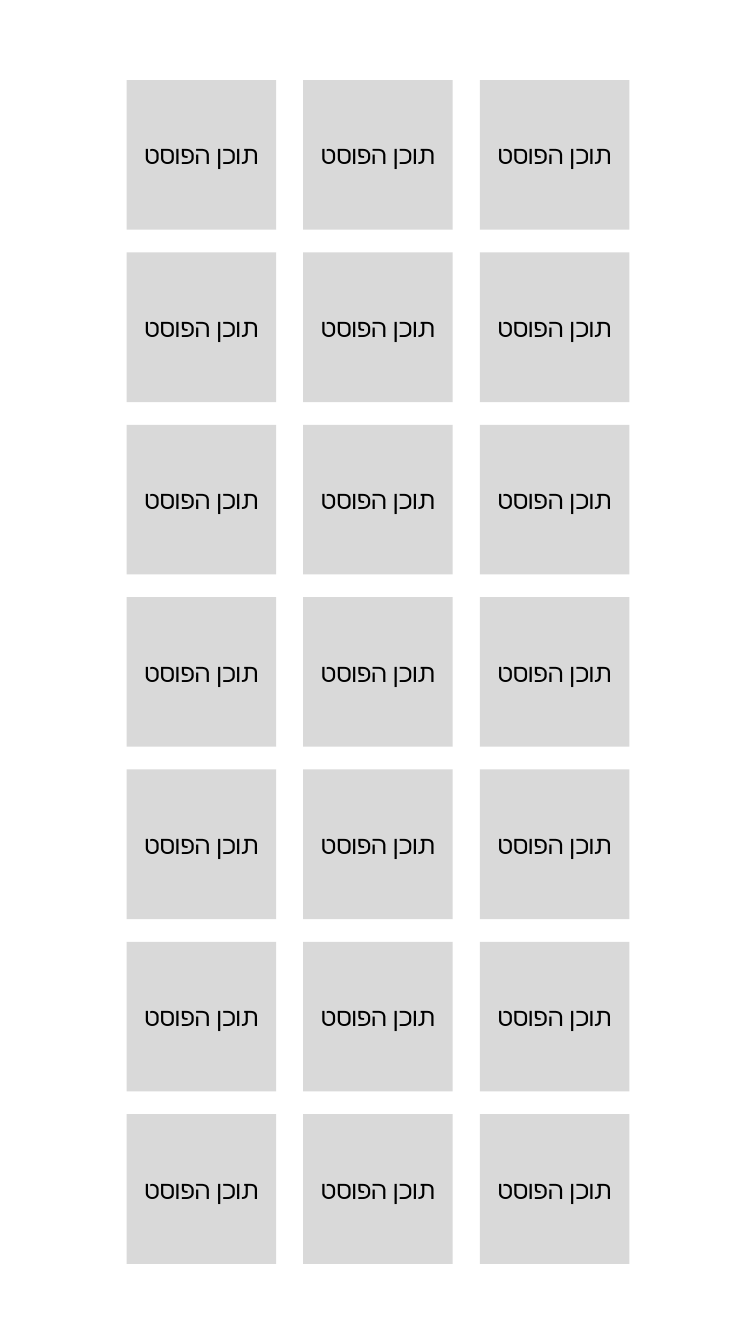
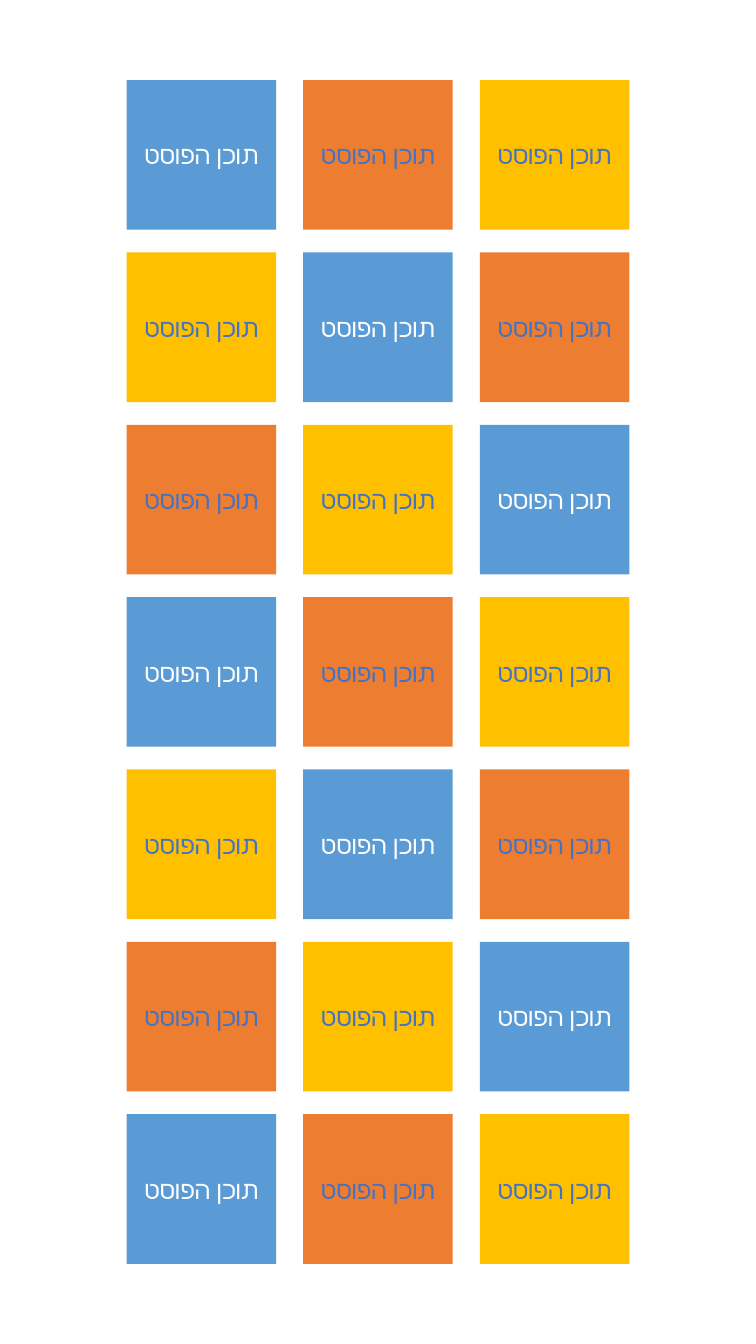
from pptx import Presentation
from pptx.dml.color import RGBColor
from pptx.enum.lang import MSO_LANGUAGE_ID
from pptx.enum.shapes import MSO_SHAPE
from pptx.enum.text import MSO_ANCHOR, PP_ALIGN
from pptx.util import Cm, Pt

COLORS = {
    "gray": "D9D9D9",
    "blue": "5B9BD5",
    "orange": "ED7D31",
    "yellow": "FFC000",
    "black": "000000",
    "white": "FFFFFF",
    "royal": "4472C4",
}
FONT = "Calibri"
POST_TEXT = "תוכן הפוסט"
ROWS, COLS = 7, 3
TILE = 3.77
GRID_BOX = (3.19, 2.02, 12.67, 29.83)  # left, top, width, height in cm

# Each style is a (fill, text) pair
PLAIN = [("gray", "black")]
COLORFUL = [("blue", "white"), ("orange", "royal"), ("yellow", "royal")]


def rgb(name):
    return RGBColor.from_string(COLORS[name])


def add_tile(shapes, left, top, fill, color):
    """Place one square post with its centred right-to-left label."""
    sp = shapes.add_shape(MSO_SHAPE.RECTANGLE, Cm(left), Cm(top), Cm(TILE), Cm(TILE))
    sp.shadow.inherit = False
    sp.fill.solid()
    sp.fill.fore_color.rgb = rgb(fill)
    sp.line.fill.background()

    # Label
    tf = sp.text_frame
    tf.text = POST_TEXT
    tf.word_wrap = True
    tf.vertical_anchor = MSO_ANCHOR.MIDDLE
    p = tf.paragraphs[0]
    p.alignment = PP_ALIGN.CENTER
    p._p.get_or_add_pPr().set("rtl", "1")
    r = p.runs[0]
    r.font.name = FONT
    r.font.size = Pt(18)
    r.font.color.rgb = rgb(color)
    r.font.language_id = MSO_LANGUAGE_ID.HEBREW


def add_post_grid(shapes, box, styles):
    """Fill the box with tiles, shifting the styles one column per row."""
    left, top, width, height = box
    step_x = (width - TILE) / (COLS - 1)
    step_y = (height - TILE) / (ROWS - 1)
    for col in reversed(range(COLS)):
        for row in range(ROWS):
            fill, color = styles[(col - row) % len(styles)]
            add_tile(shapes, left + col * step_x, top + row * step_y, fill, color)


def main():
    prs = Presentation()
    prs.slide_width, prs.slide_height = Cm(19.05), Cm(33.87)
    blank = prs.slide_layouts[6]

    # Plain grid
    s = prs.slides.add_slide(blank)
    add_post_grid(s.shapes, GRID_BOX, PLAIN)

    # Diagonal colour grid, kept together as one group
    s = prs.slides.add_slide(blank)
    add_post_grid(s.shapes.add_group_shape().shapes, GRID_BOX, COLORFUL)

    prs.save("out.pptx")


if __name__ == "__main__":
    main()
